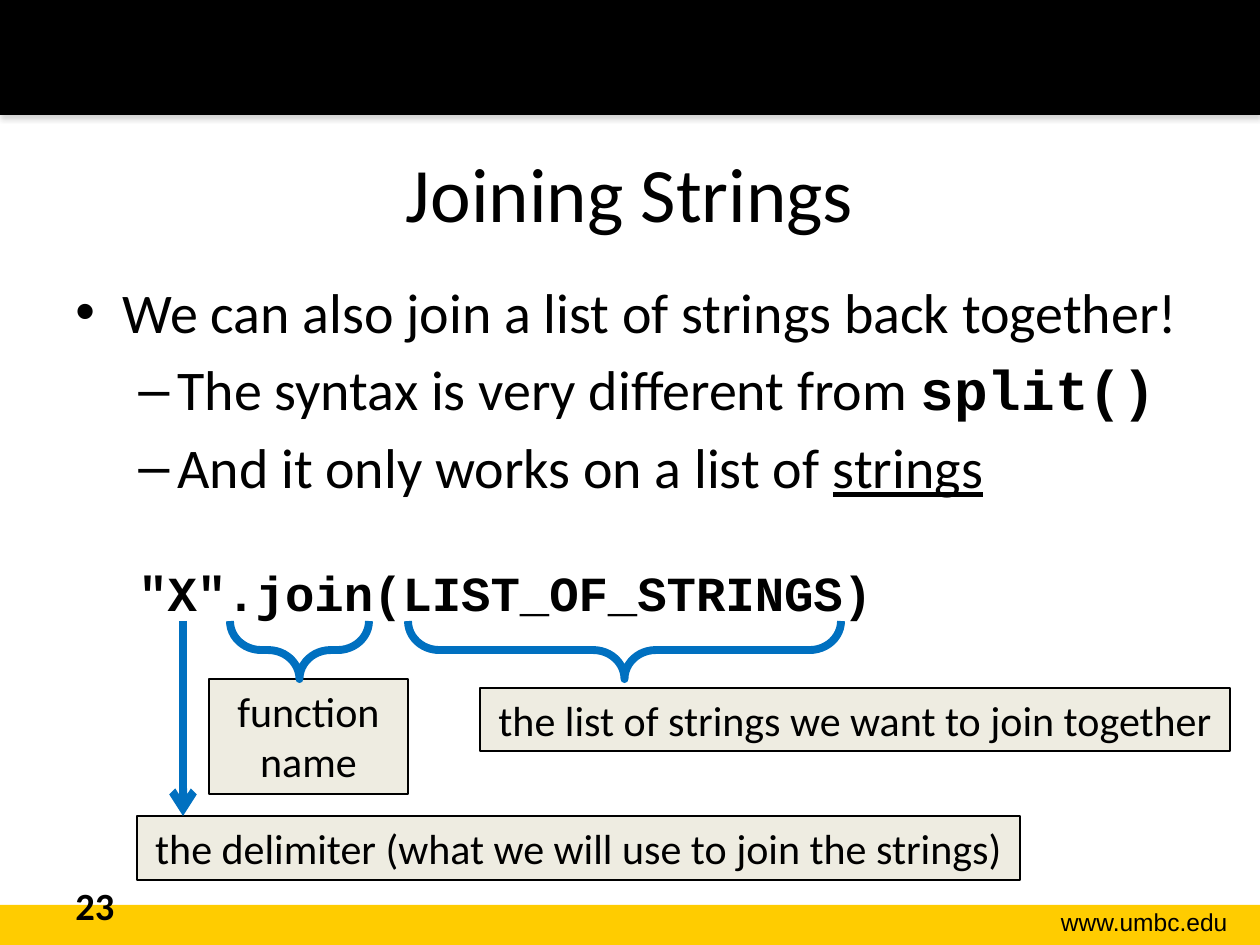
from lxml import etree
from pptx import Presentation, util as u
from pptx.dml.color import RGBColor
from pptx.enum import shapes, text
from pptx.oxml.ns import qn

PX = u.Inches(1) / 126
BLACK, GOLD, BEIGE, BLUE = "000000", "FFCC00", "EEECE1", "0070C0"
LEFT, CENTER, RIGHT = text.PP_ALIGN.LEFT, text.PP_ALIGN.CENTER, text.PP_ALIGN.RIGHT
SHAPE = shapes.MSO_SHAPE


def px(n):
    return u.Emu(round(n * PX))


def rgb(value):
    return RGBColor.from_string(value)


def sub(parent, tag, **attrs):
    return etree.SubElement(parent, qn(tag), {k: str(v) for k, v in attrs.items()})


def add_run(p, words, size, font="Calibri", bold=False, underline=False):
    r = p.add_run()
    r.text = words
    r.font.name, r.font.size = font, u.Pt(size)
    r.font.bold, r.font.underline = bold, underline
    r.font.color.rgb = rgb(BLACK)


def add_shape(s, kind, box, fill=None, line=None, width=0.75):
    sp = s.shapes.add_shape(kind, *map(px, box))
    sp.shadow.inherit = False
    if fill:
        sp.fill.solid()
        sp.fill.fore_color.rgb = rgb(fill)
    else:
        sp.fill.background()
    if line:
        sp.line.color.rgb = rgb(line)
        sp.line.width = u.Pt(width)
    else:
        sp.line.fill.background()
    return sp


def add_text(s, box, words="", size=24, align=LEFT, anchor=text.MSO_ANCHOR.TOP, **style):
    tf = s.shapes.add_textbox(*map(px, box)).text_frame
    tf.word_wrap = True
    tf.vertical_anchor = anchor
    tf.paragraphs[0].alignment = align
    if words:
        add_run(tf.paragraphs[0], words, size, **style)
    return tf


def bands(s):
    """Black header with its shadow, and gold footer with the web address."""
    add_shape(s, SHAPE.RECTANGLE, (0, 905, 1260, 40), GOLD)
    header = add_shape(s, SHAPE.RECTANGLE, (0, 0, 1260, 115), BLACK)
    effects = header._element.spPr.find(qn("a:effectLst"))
    shadow = sub(effects, "a:outerShdw", blurRad=u.Pt(3.1), dist=u.Pt(1.8),
                 dir=90 * 60000, rotWithShape=0)
    sub(sub(shadow, "a:srgbClr", val="808080"), "a:alpha", val=35000)
    add_text(s, (989, 901, 251, 43), "www.umbc.edu", 14, RIGHT, font="Arial")


def set_indent(p, margin, hanging=0, bullet=None):
    pPr = p._p.get_or_add_pPr()
    pPr.set("marL", str(px(margin)))
    pPr.set("indent", str(px(-hanging)))
    if bullet:
        sub(pPr, "a:buFont", typeface="Arial")
        sub(pPr, "a:buChar", char=bullet)


def body(s, box):
    tf = add_text(s, box)
    mono = {"font": "Courier New", "bold": True}
    lines = [
        ((47, 47, "•"), 0, 32, [("We can also join a list of strings back together!", {})]),
        ((102, 39, "–"), 6, 32, [("The syntax is very different from ", {}), ("split()", mono)]),
        ((102, 39, "–"), 6, 32, [("And it only works on a list of ", {}),
                                 ("strings", {"underline": True})]),
        ((63,), 36, 28, [('"X".join(LIST_OF_STRINGS)', mono)]),
    ]
    for i, (indent, before, size, runs) in enumerate(lines):
        p = tf.add_paragraph() if i else tf.paragraphs[0]
        set_indent(p, *indent)
        if before:
            p.space_before = u.Pt(before)
        for words, style in runs:
            add_run(p, words, size, **style)


def label(s, box, words):
    sp = add_shape(s, SHAPE.RECTANGLE, box, BEIGE, BLACK)
    tf = sp.text_frame
    tf.word_wrap = True
    tf.vertical_anchor = text.MSO_ANCHOR.TOP
    tf.paragraphs[0].alignment = CENTER
    add_run(tf.paragraphs[0], words, 24)


def brace(s, x, y, w, h):
    """Left brace turned to open upwards across the given box."""
    turned = (x + (w - h) / 2, y + (h - w) / 2, h, w)
    sp = add_shape(s, SHAPE.LEFT_BRACE, turned, line=BLUE, width=4.5)
    sp.rotation = 270
    sp.adjustments[0], sp.adjustments[1] = 0.54, 0.5


def arrow(s, x, top, bottom):
    c = s.shapes.add_connector(shapes.MSO_CONNECTOR.STRAIGHT, px(x), px(top), px(x), px(bottom))
    c.line.color.rgb = rgb(BLUE)
    c.line.width = u.Pt(4.5)
    sub(c.line._get_or_add_ln(), "a:tailEnd", type="arrow")
    sub(c._element.spPr, "a:effectLst")


def syntax_notes(s, x, y):
    """Labels, braces and arrow explaining the parts of the join call."""
    label(s, (x, y + 195, 883, 64), "the delimiter (what we will use to join the strings)")
    label(s, (x + 72, y + 58, 199, 115), "function name")
    label(s, (x + 343, y + 67, 750, 63), "the list of strings we want to join together")
    brace(s, x + 93, y, 139, 58)
    arrow(s, x + 46, y, y + 195)
    brace(s, x + 271, y, 433, 58)


def main():
    prs = Presentation()
    prs.slide_width, prs.slide_height = px(1260), px(945)
    s = prs.slides.add_slide(prs.slide_layouts[6])
    bands(s)
    add_text(s, (63, 113, 1134, 158), "Joining Strings", 44, CENTER, text.MSO_ANCHOR.MIDDLE)
    body(s, (63, 271, 1134, 573))
    add_text(s, (63, 876, 294, 50), "23", 22, bold=True)
    syntax_notes(s, 137, 621)
    prs.save("out.pptx")


if __name__ == "__main__":
    main()
